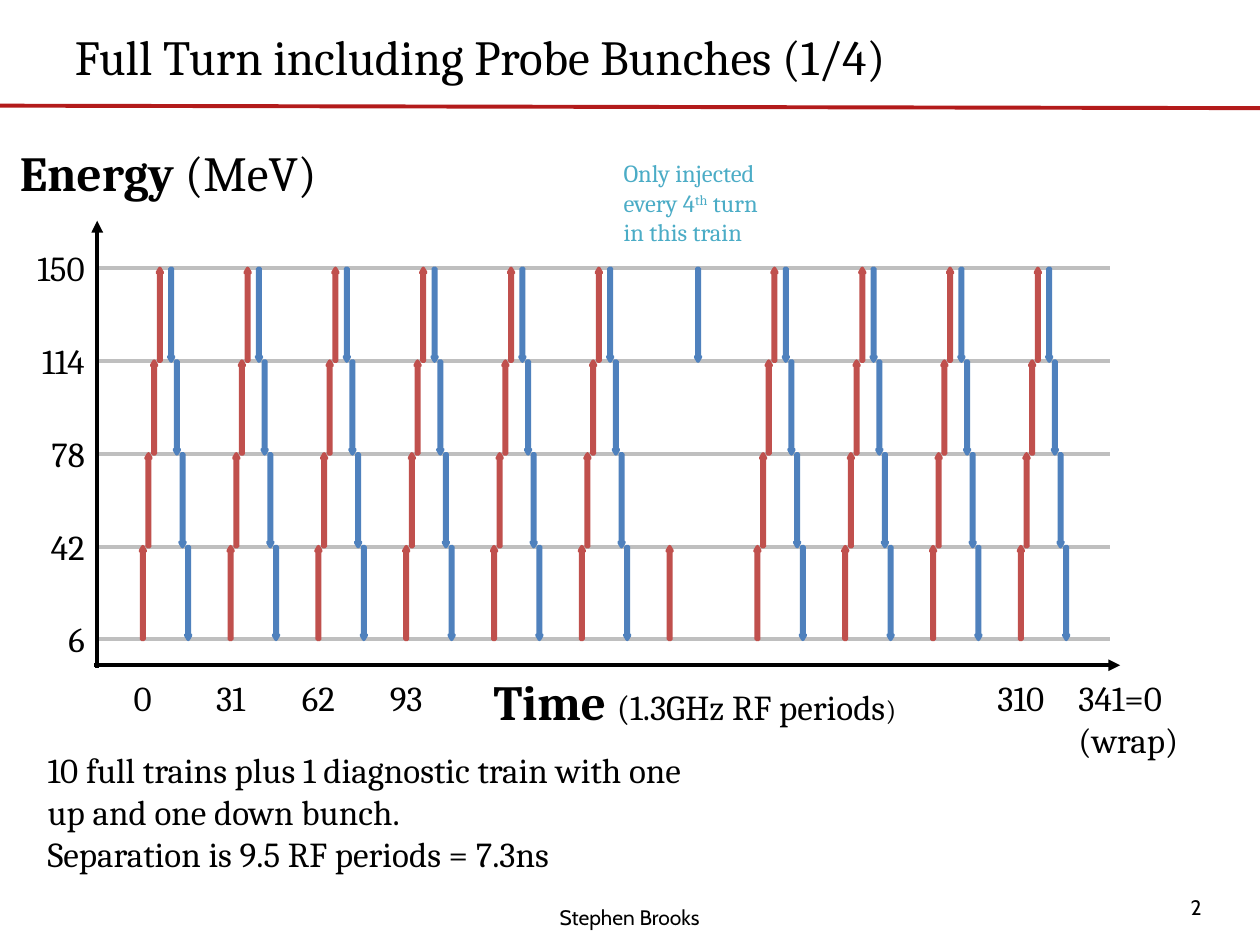
"""Build the slide on a full turn of bunch trains, energy against time."""
from dataclasses import dataclass

from lxml.etree import SubElement
from pptx import Presentation
from pptx.dml.color import RGBColor
from pptx.enum.shapes import MSO_CONNECTOR, MSO_SHAPE
from pptx.enum.text import MSO_AUTO_SIZE, PP_ALIGN
from pptx.oxml.ns import qn
from pptx.util import Cm, Pt


@dataclass(frozen=True)
class Theme:
    serif: str = "Cambria"
    sans: str = "Cabin"
    black: str = "000000"
    brand: str = "B31B1B"
    grid: str = "BFBFBF"
    note: str = "4BACC6"
    up: tuple = ("D99694", "C0504D")
    down: tuple = ("95B3D7", "4F81BD")
    title: int = 28
    body: int = 20
    small: int = 16
    aside: int = 14
    foot: int = 12
    rule: float = 2.25
    edge: int = 2


theme = Theme()
LEFT, MID, RIGHT = PP_ALIGN.LEFT, PP_ALIGN.CENTER, PP_ALIGN.RIGHT

deck = Presentation()
deck.slide_width, deck.slide_height = Cm(25.4), Cm(19.05)
slide = deck.slides.add_slide(deck.slide_layouts[6])
shapes = slide.shapes


def write(box, paras, align=LEFT, face=theme.serif, color=theme.black):
    frame = shapes.add_textbox(*map(Cm, box)).text_frame
    frame.word_wrap = True
    frame.auto_size = MSO_AUTO_SIZE.SHAPE_TO_FIT_TEXT
    for i, runs in enumerate(paras):
        para = frame.paragraphs[0] if i == 0 else frame.add_paragraph()
        para.alignment = align
        for words, size, *style in runs:
            run = para.add_run()
            run.text = words
            run.font.name = face
            run.font.size = Pt(size)
            run.font.bold = "bold" in style
            run.font.color.rgb = RGBColor.from_string(color)
            if "super" in style:
                run._r.get_or_add_rPr().set("baseline", "30000")


def rule(x1, y1, x2, y2, color, arrow=False):
    line = shapes.add_connector(MSO_CONNECTOR.STRAIGHT, *map(Cm, (x1, y1, x2, y2)))
    line.line.color.rgb = RGBColor.from_string(color)
    line.line.width = Pt(theme.rule)
    if arrow:
        SubElement(line.line._get_or_add_ln(), qn("a:tailEnd"), type="triangle")
    SubElement(line._element.spPr, qn("a:effectLst"))


rule(0, 2.13, 25.4, 2.18, theme.brand)
write((0.15, 0.41, 19.05, 1.45),
      [[("Full Turn including Probe Bunches (1/4)", theme.title)]], MID)
write((9.42, 18.11, 6.55, 0.76), [[("Stephen Brooks", theme.foot)]], MID, theme.sans)
write((23.75, 17.91, 1.65, 0.76), [[("2", theme.foot)]], face=theme.sans)

left, top, row = 1.96, 5.41, 1.87
rule(1.9, 13.41, 22.58, 13.41, theme.black, True)
for i, level in enumerate((150, 114, 78, 42, 6)):
    y = top + i * row
    rule(left, y, 22.38, y, theme.grid)
    write((-0.15, y - 0.56, 2.11, 1.12), [[(str(level), theme.body)]], RIGHT)
rule(left, 13.46, left, 4.45, theme.black, True)

write((0.15, 2.74, 7.14, 1.45),
      [[("Energy", theme.title, "bold"), (" (MeV)", theme.title)]])
write((9.7, 13.41, 9.91, 1.45),
      [[("Time ", theme.title, "bold"), ("(1.3GHz RF periods", theme.body),
        (")", theme.small)]])

start, gap = 2.88, 31
period = 1.77 / gap
wide = 0.1
ups = [(2 * i, 3 - i, 0, theme.up) for i in range(4)]
downs = [(10 + 2 * i, i, 180, theme.down) for i in range(4)]
for train in range(11):
    group = shapes.add_group_shape()
    probe = train == 6
    bunches = [ups[0], downs[0]] if probe else ups + downs
    for delay, band, turn, (fill, edge) in bunches:
        x = start + (train * gap + delay) * period
        arrow = group.shapes.add_shape(
            MSO_SHAPE.UP_ARROW, Cm(x - wide / 2), Cm(top + band * row), Cm(wide), Cm(row))
        arrow.adjustments[0], arrow.adjustments[1] = 0.5, 0.88
        arrow.rotation = turn
        arrow.shadow.inherit = False
        arrow.fill.solid()
        arrow.fill.fore_color.rgb = RGBColor.from_string(fill)
        arrow.line.color.rgb = RGBColor.from_string(edge)
        arrow.line.width = Pt(theme.edge)

for time in (0, 31, 62, 93, 310):
    span = 1.83 if time > 99 else 1.52
    write((start + time * period - span / 2, 13.51, span, 1.12),
          [[(str(time), theme.body)]], MID)
write((21.49, 13.51, 3.05, 1.96), [[("341=0 (wrap)", theme.body)]])

write((12.32, 3.07, 3.45, 2.06),
      [[("Only injected every 4", theme.aside), ("th", theme.aside, "super"),
        (" turn in this train", theme.aside)]], color=theme.note)
write((0.71, 14.96, 14.15, 2.82),
      [[("10 full trains plus 1 diagnostic train with one up and one down bunch.",
         theme.body)],
       [("Separation is 9.5 RF periods = 7.3ns", theme.body)]])

deck.save("out.pptx")
